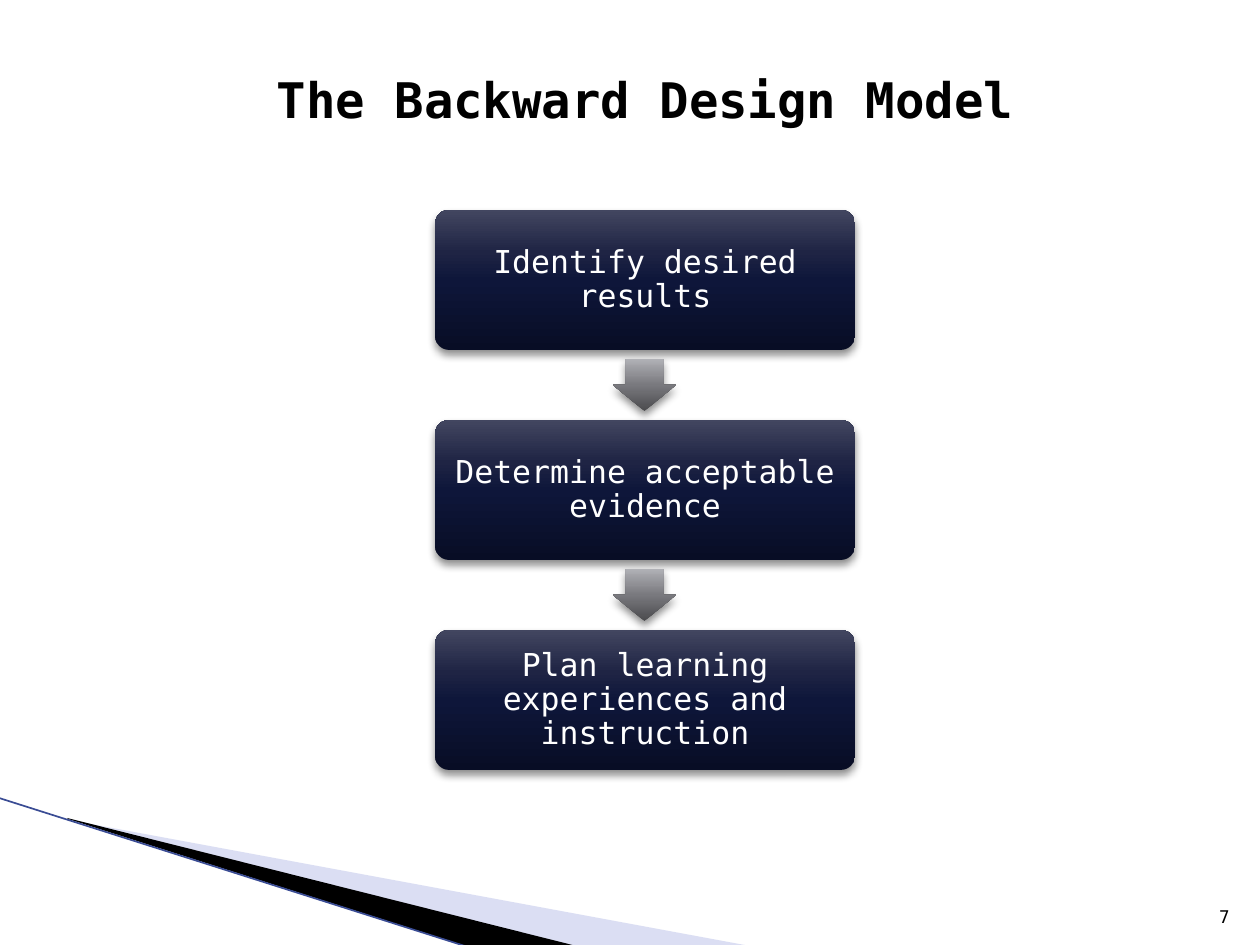
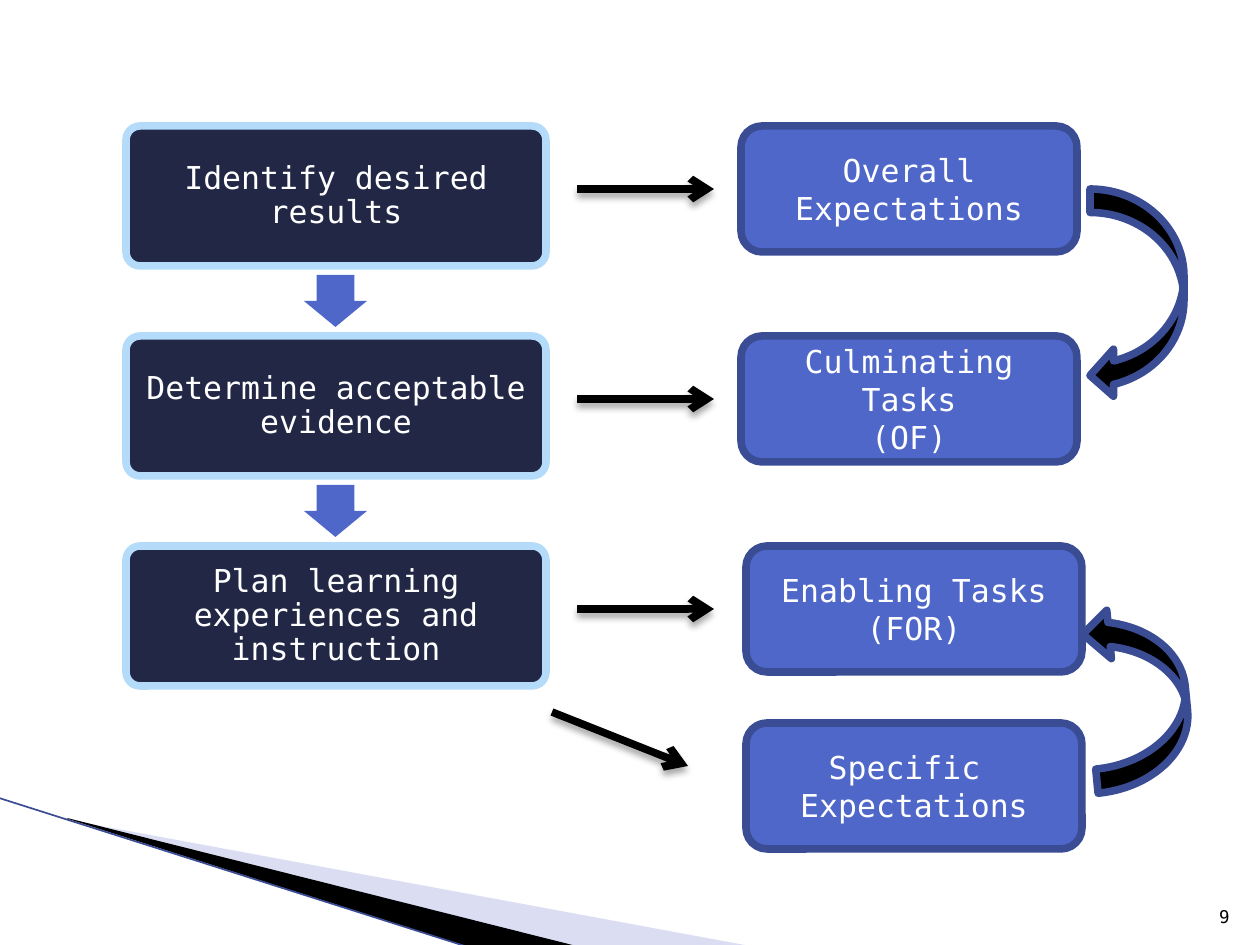
import copy

import lxml.etree
import pptx
import pptx.dml.color
import pptx.enum.shapes
import pptx.enum.text
import pptx.oxml.ns
import pptx.util

RGBColor = pptx.dml.color.RGBColor
SHAPE = pptx.enum.shapes.MSO_SHAPE
STRAIGHT = pptx.enum.shapes.MSO_CONNECTOR.STRAIGHT
ALIGN = pptx.enum.text.PP_ALIGN
ANCHOR = pptx.enum.text.MSO_ANCHOR
Pt = pptx.util.Pt
qn = pptx.oxml.ns.qn

SCALE = 914400 / 126
FONT = "DejaVu Sans Mono"
BLACK = RGBColor(0x00, 0x00, 0x00)
WHITE = RGBColor(0xFF, 0xFF, 0xFF)
LAVENDER = RGBColor(0xA6, 0xAE, 0xE1)
NAVY = RGBColor(0x21, 0x27, 0x45)
SKY = RGBColor(0xB4, 0xDC, 0xFA)
BLUE = RGBColor(0x4E, 0x67, 0xC8)
DEEP_BLUE = RGBColor(0x3A, 0x4C, 0x94)
STOP_POSITIONS = (0, 0.5, 0.7, 1)
NAVY_GRADIENT = [RGBColor(0x08, 0x0D, 0x25), RGBColor(0x0E, 0x16, 0x3A),
                 RGBColor(0x1F, 0x24, 0x44), RGBColor(0x42, 0x46, 0x60)]
GRAY_GRADIENT = [RGBColor(0x4B, 0x4B, 0x4E), RGBColor(0x79, 0x79, 0x7E),
                 RGBColor(0x8F, 0x8F, 0x94), RGBColor(0xB0, 0xB1, 0xB6)]
BORDER_WIDTH = 4.33
CARD_SHADOW = {"alpha": 45, "blur": 5, "distance": 3}
ARROW_SHADOW = {"alpha": 35, "blur": 4, "distance": 3}

BODY = {"size": Pt(18), "name": FONT, "bold": False}
TITLE = {"size": Pt(28), "name": FONT, "bold": True}
NUMBER = {"size": Pt(10), "name": FONT, "bold": False}

STEPS = ("Identify desired results", "Determine acceptable evidence",
         "Plan learning experiences and instruction")
STEP_PITCH = 210
CARD_WIDTH, CARD_HEIGHT = 420, 140
DOWN_WIDTH, DOWN_HEIGHT, DOWN_GAP = 63, 52, 9


def dress(shape, fill=None, line=None, width=BORDER_WIDTH, shadow=None):
    if isinstance(fill, list):
        shape.fill.gradient()
        shape.fill.gradient_angle = 90
        stop_list = shape._element.spPr.find(".//" + qn("a:gsLst"))
        for _ in range(len(fill) - 2):
            stop_list.append(copy.deepcopy(stop_list[-1]))
        for stop, position, color in zip(shape.fill.gradient_stops, STOP_POSITIONS, fill):
            stop.position = position
            stop.color.rgb = color
    elif fill is not None:
        shape.fill.solid()
        shape.fill.fore_color.rgb = fill
    if line is None:
        shape.line.fill.background()
    else:
        shape.line.color.rgb = line
        shape.line.width = Pt(width)
    effects = lxml.etree.SubElement(shape._element.spPr, qn("a:effectLst"))
    if shadow:
        outer = lxml.etree.SubElement(
            effects, qn("a:outerShdw"), blurRad=str(Pt(shadow["blur"])),
            dist=str(Pt(shadow["distance"])), dir="5400000", rotWithShape="0")
        color = lxml.etree.SubElement(outer, qn("a:srgbClr"), val=str(BLACK))
        lxml.etree.SubElement(color, qn("a:alpha"), val=str(shadow["alpha"] * 1000))


def write(shape, lines, font_format, color, align=ALIGN.CENTER, anchor=ANCHOR.MIDDLE, spacing=1.0):
    frame = shape.text_frame
    frame.word_wrap = True
    frame.vertical_anchor = anchor
    for index, text in enumerate(lines):
        paragraph = frame.add_paragraph() if index else frame.paragraphs[0]
        paragraph.text = text
        paragraph.alignment = align
        paragraph.line_spacing = spacing
        for name, value in font_format.items():
            setattr(paragraph.font, name, value)
        paragraph.font.color.rgb = color


presentation = pptx.Presentation()
presentation.slide_width = round(1260 * SCALE)
presentation.slide_height = round(945 * SCALE)

SLIDES = (
    {"number": "7", "left": 435, "top": 210, "card": NAVY_GRADIENT, "border": None,
     "arrow": GRAY_GRADIENT, "shadow": CARD_SHADOW},
    {"number": "9", "left": 126, "top": 126, "card": NAVY, "border": SKY,
     "arrow": BLUE, "shadow": None},
)
WEDGES = (
    (LAVENDER, 40, ((69, 820), (750, 946), (575, 946), (69, 819))),
    (BLACK, 100, ((67, 818), (576, 946), (469, 947), (68, 819))),
)

for flow in SLIDES:
    slide = presentation.slides.add_slide(presentation.slide_layouts[6])
    for color, opacity, points in WEDGES:
        builder = slide.shapes.build_freeform(*points[0], scale=SCALE)
        builder.add_line_segments(points[1:], close=True)
        wedge = builder.convert_to_shape()
        dress(wedge, color)
        wedge_color = wedge._element.spPr.find(qn("a:solidFill"))[0]
        lxml.etree.SubElement(wedge_color, qn("a:alpha"), val=str(opacity * 1000))
    edge = slide.shapes.add_connector(
        STRAIGHT, *[round(value * SCALE) for value in (-1, 798, 468, 947)])
    dress(edge, line=DEEP_BLUE, width=0.95)

    for index, step in enumerate(STEPS):
        top = flow["top"] + index * STEP_PITCH
        box = (flow["left"], top, CARD_WIDTH, CARD_HEIGHT)
        card = slide.shapes.add_shape(
            SHAPE.ROUNDED_RECTANGLE, *[round(value * SCALE) for value in box])
        card.adjustments[0] = 0.1
        dress(card, flow["card"], flow["border"], shadow=flow["shadow"])
        for side in ("left", "right", "top", "bottom"):
            setattr(card.text_frame, "margin_" + side, round(9 * SCALE))
        write(card, [step], BODY, WHITE, spacing=0.9)
        if index < len(STEPS) - 1:
            box = (flow["left"] + (CARD_WIDTH - DOWN_WIDTH) // 2,
                   top + CARD_HEIGHT + DOWN_GAP, DOWN_WIDTH, DOWN_HEIGHT)
            arrow = slide.shapes.add_shape(
                SHAPE.DOWN_ARROW, *[round(value * SCALE) for value in box])
            arrow.adjustments[0] = 0.6
            arrow.adjustments[1] = 0.5
            dress(arrow, flow["arrow"], shadow=flow["shadow"])

    number = slide.shapes.add_textbox(
        *[round(value * SCALE) for value in (1192, 883, 50, 50)])
    write(number, [flow["number"]], NUMBER, BLACK, ALIGN.RIGHT, ANCHOR.BOTTOM)

model_slide, expectations_slide = presentation.slides

title = model_slide.shapes.add_textbox(
    *[round(value * SCALE) for value in (62, 63, 1166, 72)])
write(title, ["The Backward Design Model"], TITLE, BLACK, anchor=ANCHOR.TOP)

OUTCOMES = (
    (741, 126, ("Overall", "Expectations")),
    (741, 336, ("Culminating Tasks", "(OF)")),
    (746, 546, ("Enabling Tasks", "(FOR)")),
    (746, 723, ("Specific ", "Expectations")),
)
for left, top, lines in OUTCOMES:
    outcome = expectations_slide.shapes.add_shape(
        SHAPE.ROUNDED_RECTANGLE, *[round(value * SCALE) for value in (left, top, 336, 126)])
    dress(outcome, BLUE, DEEP_BLUE)
    write(outcome, lines, BODY, WHITE)

LINKS = [(577, 189 + index * STEP_PITCH, 714, 189 + index * STEP_PITCH)
         for index in range(len(STEPS))]
LINKS.append((552, 712, 688, 766))
for ends in LINKS:
    link = expectations_slide.shapes.add_connector(
        STRAIGHT, *[round(value * SCALE) for value in ends])
    dress(link, line=BLACK, shadow=ARROW_SHADOW)
    lxml.etree.SubElement(link._element.spPr.find(qn("a:ln")), qn("a:tailEnd"), type="arrow")

CURVES = (
    ((1090, 189, 94, 210), 0, False, 0.25),
    ((1089, 605, 97, 184), 174.5, True, 0.27),
)
for box, rotation, flipped, head in CURVES:
    curve = expectations_slide.shapes.add_shape(
        SHAPE.CURVED_LEFT_ARROW, *[round(value * SCALE) for value in box])
    for index, value in enumerate((0.25, 0.5, head)):
        curve.adjustments[index] = value
    curve.rotation = rotation
    if flipped:
        curve._element.spPr.find(qn("a:xfrm")).set("flipH", "1")
    dress(curve, BLACK, DEEP_BLUE)

presentation.save("out.pptx")
